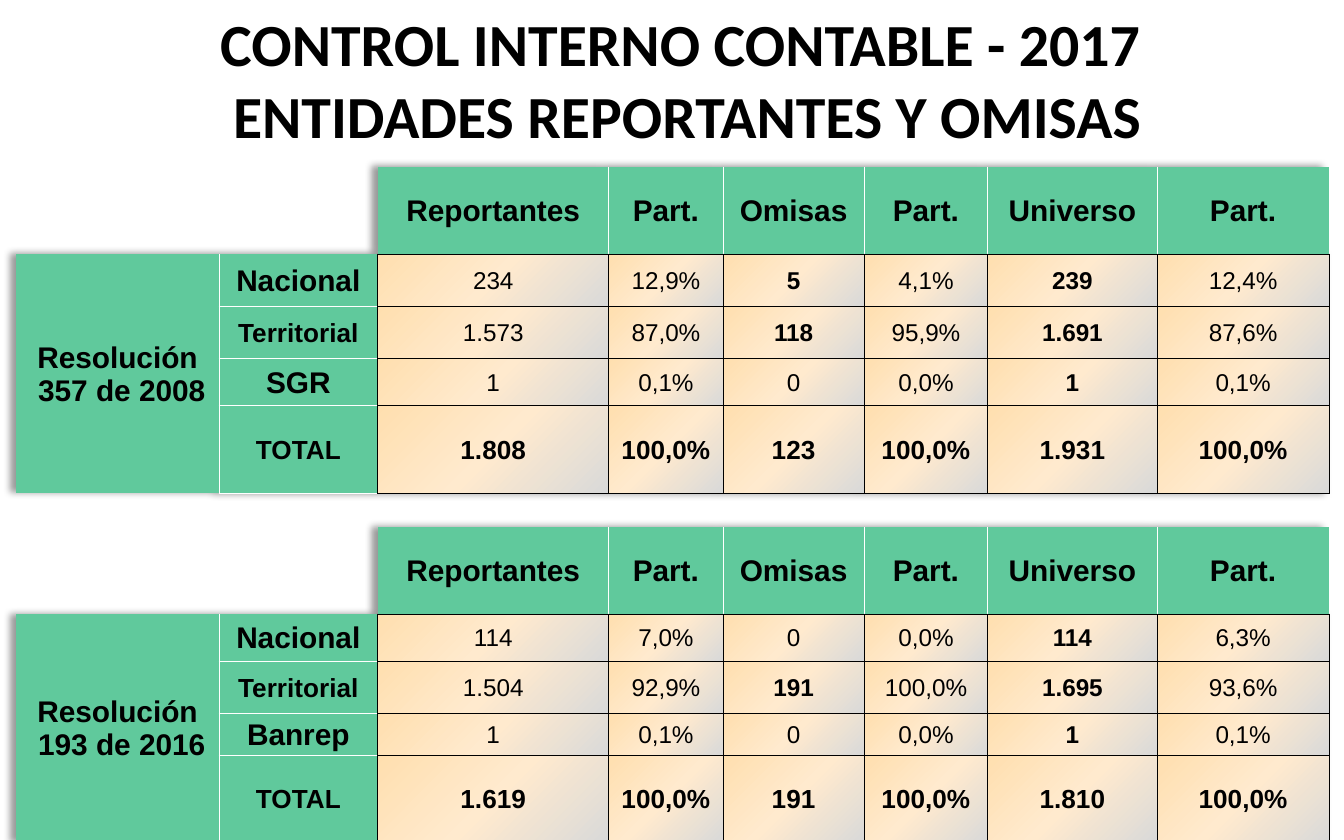
"""Builds the slide on internal accounting control: reporting and omitted entities."""
from lxml import etree
from pptx import Presentation
from pptx import util as u
from pptx.dml import color
from pptx.enum import text
from pptx.oxml.ns import qn

BLACK = color.RGBColor(0x00, 0x00, 0x00)
WHITE = color.RGBColor(0xFF, 0xFF, 0xFF)
GREEN = color.RGBColor(0x60, 0xC9, 0x9C)
PEACH = color.RGBColor(0xFF, 0xDF, 0xAF)
CREAM = color.RGBColor(0xFF, 0xEA, 0xCE)
GREY = color.RGBColor(0xD9, 0xD9, 0xD9)

WIDTH, HEIGHT = u.Inches(10), u.Inches(6.25)
NO_STYLE = "{2D5ABB26-0587-4C30-8999-92F81FD0307C}"
COLUMNS = [1.51, 1.18, 1.72, 0.85, 1.05, 0.92, 1.26, 1.28]
ROWS = [0.65, 0.39, 0.39, 0.35, 0.65, 0.25, 0.65, 0.35, 0.39, 0.31, 0.65]
HEADINGS = ["Reportantes", "Part.", "Omisas", "Part.", "Universo", "Part."]
TITLE = ["CONTROL INTERNO CONTABLE - 2017 ", "ENTIDADES REPORTANTES Y OMISAS"]
BLOCKS = [
    (0, ["Resolución", " 357 de 2008"], [
        ("Nacional", 16, ["234", "12,9%", "5", "4,1%", "239", "12,4%"]),
        ("Territorial", 14, ["1.573", "87,0%", "118", "95,9%", "1.691", "87,6%"]),
        ("SGR", 16, ["1", "0,1%", "0", "0,0%", "1", "0,1%"]),
        ("TOTAL", 14, ["1.808", "100,0%", "123", "100,0%", "1.931", "100,0%"]),
    ]),
    (6, ["Resolución", " 193 de 2016"], [
        ("Nacional", 16, ["114", "7,0%", "0", "0,0%", "114", "6,3%"]),
        ("Territorial", 14, ["1.504", "92,9%", "191", "100,0%", "1.695", "93,6%"]),
        ("Banrep", 16, ["1", "0,1%", "0", "0,0%", "1", "0,1%"]),
        ("TOTAL", 14, ["1.619", "100,0%", "191", "100,0%", "1.810", "100,0%"]),
    ]),
]


def add_span(para, words, font, size, bold):
    """Add one formatted run to a centred paragraph."""
    para.alignment = text.PP_ALIGN.CENTER
    span = para.add_run()
    span.text = words
    span.font.name, span.font.size, span.font.bold = font, u.Pt(size), bold
    span.font.color.rgb = BLACK


def add_title(page):
    """Add the two-line title."""
    box = page.shapes.add_textbox(int(WIDTH * 0.034), 0, int(WIDTH * 0.955), int(HEIGHT * 0.17))
    box.text_frame.word_wrap = True
    para = box.text_frame.paragraphs[0]
    for index, line in enumerate(TITLE):
        if index:
            para.add_line_break()
        add_span(para, line, "Calibri", 32, True)


def add_colour(parent, value):
    """Append an RGB colour element."""
    return etree.SubElement(parent, qn("a:srgbClr"), val=str(value))


def set_borders(cell, **sides):
    """Draw the given cell sides (L, R, T, B) as thin lines."""
    properties = cell._tc.get_or_add_tcPr()
    drawn = [side for side in "LRTB" if sides.get(side) is not None]
    for index, side in enumerate(drawn):
        line = etree.Element(qn(f"a:ln{side}"), w=str(u.Pt(0.5)))
        add_colour(etree.SubElement(line, qn("a:solidFill")), sides[side])
        properties.insert(index, line)


def fill_green(cell):
    """Give a heading or label cell its plain fill."""
    cell.fill.solid()
    cell.fill.fore_color.rgb = GREEN


def fill_gradient(cell):
    """Give a value cell its diagonal three-stop gradient."""
    gradient = etree.SubElement(cell._tc.get_or_add_tcPr(), qn("a:gradFill"), rotWithShape="1")
    stops = etree.SubElement(gradient, qn("a:gsLst"))
    for place, value in ((0, PEACH), (50, CREAM), (100, GREY)):
        add_colour(etree.SubElement(stops, qn("a:gs"), pos=str(place * 1000)), value)
    etree.SubElement(gradient, qn("a:lin"), ang=str(45 * 60000), scaled="0")


def write_cell(cell, lines, size, bold):
    """Write centred lines into a cell, one paragraph each."""
    frame = cell.text_frame
    for index, line in enumerate(lines):
        para = frame.add_paragraph() if index else frame.paragraphs[0]
        add_span(para, line, "Arial", size, bold)


def add_shadow(table):
    """Cast a soft shadow to the left of the filled cells."""
    properties = table._tbl.tblPr
    effects = etree.Element(qn("a:effectLst"))
    properties.insert(0, effects)
    shadow = etree.SubElement(effects, qn("a:outerShdw"), blurRad=str(u.Pt(4)), dist=str(u.Pt(3)),
                              dir=str(180 * 60000), algn="r", rotWithShape="0")
    etree.SubElement(add_colour(shadow, BLACK), qn("a:alpha"), val="40000")


def add_grid(page):
    """Add the empty table with its column widths and row heights."""
    frame = page.shapes.add_table(len(ROWS), len(COLUMNS), int(WIDTH * 0.012), u.Inches(1.24),
                                  u.Inches(sum(COLUMNS)), u.Inches(sum(ROWS)))
    table = frame.table
    table.first_row = table.horz_banding = False
    table._tbl.tblPr.find(qn("a:tableStyleId")).text = NO_STYLE
    add_shadow(table)
    for column, width in zip(table.columns, COLUMNS):
        column.width = u.Inches(width)
    for row, height in zip(table.rows, ROWS):
        row.height = u.Inches(height)
    for cell in table.iter_cells():
        cell.margin_left = cell.margin_right = cell.margin_top = u.Inches(0.01)
        cell.margin_bottom = 0
        cell.vertical_anchor = text.MSO_ANCHOR.MIDDLE
        etree.SubElement(cell.text_frame.paragraphs[0]._p, qn("a:endParaRPr"), sz="1000")
    return table


def fill_headings(table, top):
    """Fill one heading row."""
    last = len(HEADINGS) - 1
    for index, heading in enumerate(HEADINGS):
        cell = table.cell(top, index + 2)
        write_cell(cell, [heading], 16, True)
        fill_green(cell)
        set_borders(cell, L=WHITE if index else None, R=WHITE if index < last else None, B=BLACK)


def fill_entity(table, row, label, size, values, first):
    """Fill one entity row: its label and its six values."""
    total = label == "TOTAL"
    cell = table.cell(row, 1)
    write_cell(cell, [label], size, True)
    fill_green(cell)
    set_borders(cell, L=WHITE, R=BLACK, T=None if first else WHITE, B=None if total else WHITE)
    for index, (heading, value) in enumerate(zip(HEADINGS, values)):
        cell = table.cell(row, index + 2)
        strong = total or heading == "Universo" or (heading == "Omisas" and value != "0")
        write_cell(cell, [value], 14 if total else 13, strong)
        fill_gradient(cell)
        set_borders(cell, L=BLACK, R=BLACK, T=BLACK, B=BLACK)


def fill_block(table, top, resolution, entities):
    """Fill the headings, resolution cell and entity rows of one block."""
    fill_headings(table, top)
    cell = table.cell(top + 1, 0)
    cell.merge(table.cell(top + len(entities), 0))
    write_cell(cell, resolution, 16, True)
    fill_green(cell)
    set_borders(cell, R=WHITE)
    for index, (label, size, values) in enumerate(entities):
        fill_entity(table, top + 1 + index, label, size, values, index == 0)


def main():
    """Build and save the deck."""
    deck = Presentation()
    deck.slide_width, deck.slide_height = WIDTH, HEIGHT
    page = deck.slides.add_slide(deck.slide_layouts[6])
    add_title(page)
    table = add_grid(page)
    for top, resolution, entities in BLOCKS:
        fill_block(table, top, resolution, entities)
    deck.save("out.pptx")


if __name__ == "__main__":
    main()
